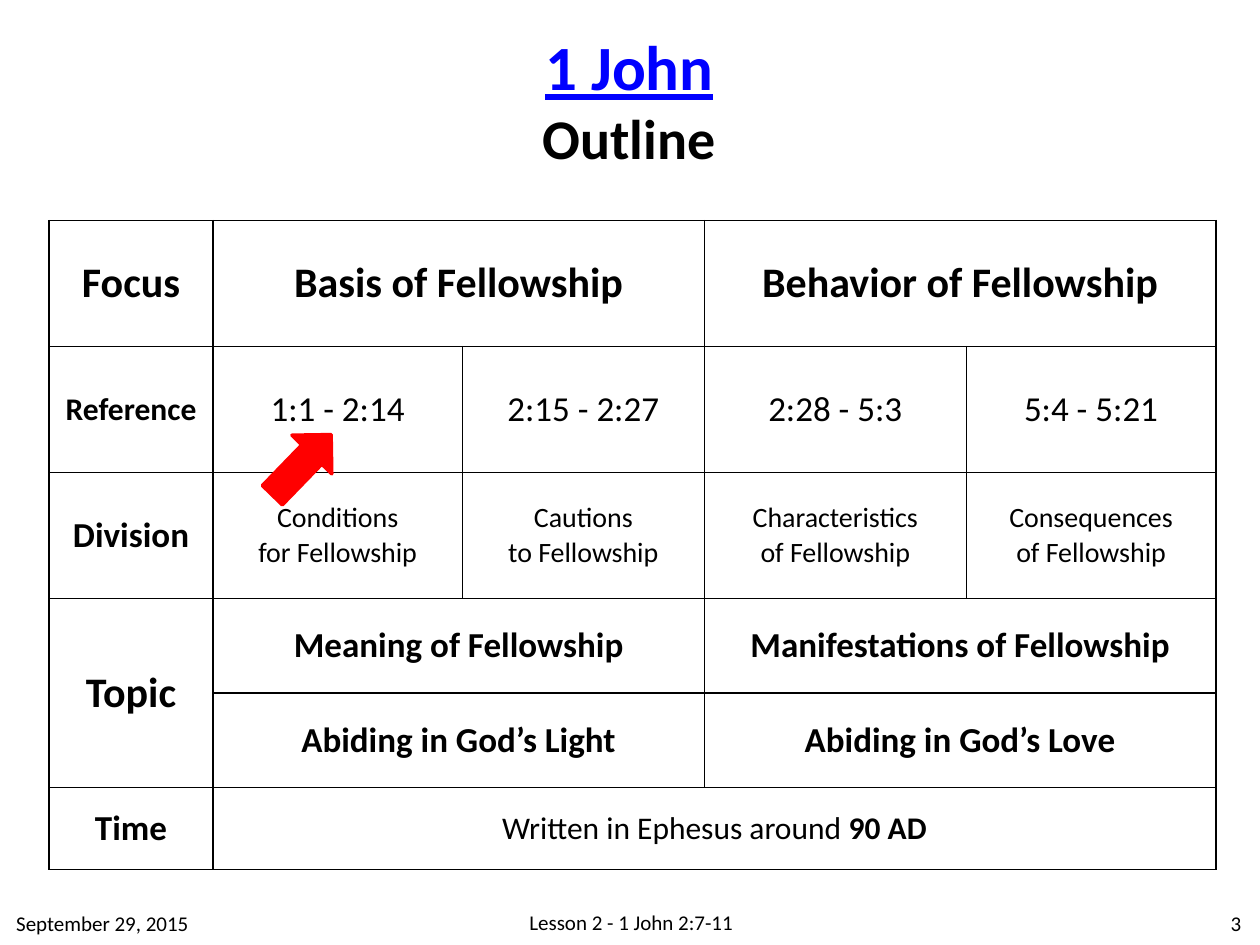
from lxml import etree
from pptx import Presentation
from pptx.dml.color import RGBColor
from pptx.enum.shapes import MSO_SHAPE
from pptx.enum.text import MSO_ANCHOR, PP_ALIGN
from pptx.oxml.ns import qn
from pptx.util import Inches, Pt

BLACK = RGBColor(0, 0, 0)
BLUE = RGBColor(0, 0, 255)
RED = RGBColor(255, 0, 0)
LEFT, MID, RIGHT = PP_ALIGN.LEFT, PP_ALIGN.CENTER, PP_ALIGN.RIGHT
CENTER = MSO_ANCHOR.MIDDLE
ARROW = MSO_SHAPE.RIGHT_ARROW
FONT = "Calibri"

COLS = [1.3, 1.98, 1.92, 2.08, 1.98]
ROWS = [1, 1, 1, 0.75, 0.75, 0.65]

# row, column, rows spanned, columns spanned, text, size, bold
CELLS = [
    (0, 0, 1, 1, "Focus", 24, True),
    (0, 1, 1, 2, "Basis of Fellowship", 24, True),
    (0, 3, 1, 2, "Behavior of Fellowship", 24, True),
    (1, 0, 1, 1, "Reference", 18, True),
    (1, 1, 1, 1, "1:1 - 2:14", 20, False),
    (1, 2, 1, 1, "2:15 - 2:27", 20, False),
    (1, 3, 1, 1, "2:28 - 5:3", 20, False),
    (1, 4, 1, 1, "5:4 - 5:21", 20, False),
    (2, 0, 1, 1, "Division", 20, True),
    (2, 1, 1, 1, "Conditions\nfor Fellowship", 16, False),
    (2, 2, 1, 1, "Cautions\nto Fellowship", 16, False),
    (2, 3, 1, 1, "Characteristics\nof Fellowship", 16, False),
    (2, 4, 1, 1, "Consequences\nof Fellowship", 16, False),
    (3, 0, 2, 1, "Topic", 24, True),
    (3, 1, 1, 2, "Meaning of Fellowship", 20, True),
    (3, 3, 1, 2, "Manifestations of Fellowship", 20, True),
    (4, 1, 1, 2, "Abiding in God’s Light", 20, True),
    (4, 3, 1, 2, "Abiding in God’s Love", 20, True),
    (5, 0, 1, 1, "Time", 20, True),
    (5, 1, 1, 4, "Written in Ephesus around ", 18, False),
]


def write(frame, text, size, bold=False, align=MID):
    frame.text = text
    for para in frame.paragraphs:
        para.alignment = align
        font = para.font
        font.name, font.size, font.bold = FONT, Pt(size), bold
        font.color.rgb = BLACK


def add_text(slide, box, text, size, bold=False, align=MID):
    frame = slide.shapes.add_textbox(*map(Inches, box)).text_frame
    frame.word_wrap = True
    frame.vertical_anchor = CENTER
    write(frame, text, size, bold, align)
    return frame


def add_title(slide):
    frame = add_text(slide, (4.2, 0.16, 1.59, 1.25), "1 John\nOutline", 32, True)
    frame.word_wrap = False
    font = frame.paragraphs[0].font
    font.size, font.underline = Pt(36), True
    font.color.rgb = BLUE


def rule(cell):
    """Give a cell thin black borders on all four sides."""
    props = cell._tc.get_or_add_tcPr()
    for spot, side in enumerate(("lnL", "lnR", "lnT", "lnB")):
        line = etree.Element(qn("a:" + side), w=str(Pt(1)))
        fill = etree.SubElement(line, qn("a:solidFill"))
        etree.SubElement(fill, qn("a:srgbClr"), val=str(BLACK))
        props.insert(spot, line)


def add_grid(slide):
    box = map(Inches, (0.39, 1.75, sum(COLS), sum(ROWS)))
    table = slide.shapes.add_table(len(ROWS), len(COLS), *box).table
    table.first_row = table.horz_banding = False
    for col, width in zip(table.columns, COLS):
        col.width = Inches(width)
    for row, height in zip(table.rows, ROWS):
        row.height = Inches(height)
    for cell in table.iter_cells():
        cell.fill.background()
        rule(cell)
    for row, col, down, over, text, size, bold in CELLS:
        cell = table.cell(row, col)
        if down * over > 1:
            cell.merge(table.cell(row + down - 1, col + over - 1))
        cell.vertical_anchor = CENTER
        write(cell.text_frame, text, size, bold)
    year = table.cell(5, 1).text_frame.paragraphs[0].add_run()
    year.text = "90 AD"
    year.font.bold = True


def add_arrow(slide):
    arrow = slide.shapes.add_shape(ARROW, *map(Inches, (2.06, 3.47, 0.67, 0.44)))
    arrow.rotation = 314.1
    arrow.shadow.inherit = False
    arrow.fill.solid()
    arrow.fill.fore_color.rgb = RED
    arrow.line.color.rgb = RED
    arrow.line.width = Pt(2)


def main():
    deck = Presentation()
    deck.slide_width, deck.slide_height = Inches(10), Inches(7.5)
    slide = deck.slides.add_slide(deck.slide_layouts[6])
    add_title(slide)
    add_grid(slide)
    add_arrow(slide)
    add_text(slide, (9.2, 7.13, 0.75, 0.4), "3", 12, align=RIGHT)
    add_text(slide, (0.03, 7.13, 1.58, 0.4), "September 29, 2015", 12, align=LEFT)
    add_text(slide, (2.3, 7.12, 5.42, 0.4), "Lesson 2 - 1 John 2:7-11", 12)
    deck.save("out.pptx")


if __name__ == "__main__":
    main()
